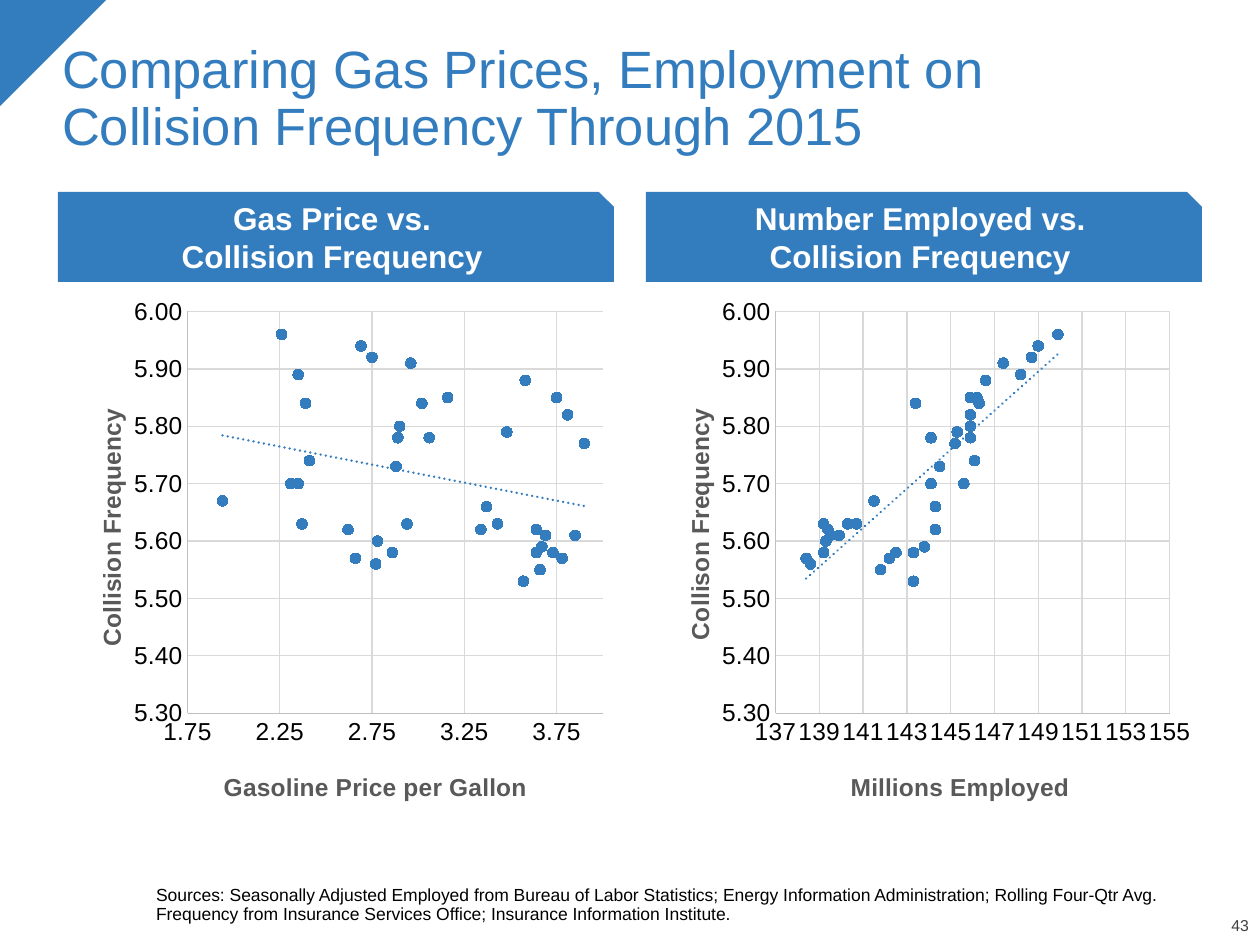
from pptx import Presentation
from pptx.chart.data import XyChartData
from pptx.dml.color import RGBColor
from pptx.enum.chart import XL_CHART_TYPE as ChartType, XL_MARKER_STYLE as Marker
from pptx.enum.chart import XL_TICK_MARK as Tick
from pptx.enum.shapes import MSO_SHAPE as Shape
from pptx.enum.text import MSO_ANCHOR as Anchor, MSO_AUTO_SIZE as AutoSize, PP_ALIGN as Align
from pptx.oxml import parse_xml
from pptx.oxml.ns import nsdecls, qn
from pptx.util import Emu, Pt

PX = 914400 / 126
BLUE, WHITE, BLACK = "337DBE", "FFFFFF", "000000"
DARK, GREY, AXIS_LINE, GRID_LINE = "404040", "595959", "BFBFBF", "D9D9D9"

COLLISION_FREQUENCY = [
    5.84, 5.78, 5.73, 5.70, 5.74, 5.78, 5.80, 5.84, 5.85, 5.82,
    5.77, 5.70, 5.67, 5.63, 5.62, 5.57, 5.56, 5.58, 5.60, 5.63,
    5.62, 5.61, 5.61, 5.63, 5.55, 5.57, 5.58, 5.53, 5.58, 5.59,
    5.62, 5.66, 5.79, 5.85, 5.88, 5.91, 5.89, 5.92, 5.94, 5.96]
GAS_PRICE = [
    2.39, 2.89, 2.88, 2.31, 2.41, 3.06, 2.90, 3.02, 3.16, 3.81,
    3.90, 2.35, 1.94, 2.37, 2.62, 2.66, 2.77, 2.86, 2.78, 2.94,
    3.34, 3.85, 3.69, 3.43, 3.66, 3.78, 3.73, 3.57, 3.64, 3.67,
    3.64, 3.37, 3.48, 3.75, 3.58, 2.96, 2.35, 2.75, 2.69, 2.26]
MILLIONS_EMPLOYED = [
    143.4, 144.1, 144.5, 145.6, 146.1, 145.9, 145.9, 146.3, 145.9, 145.9,
    145.2, 144.1, 141.5, 140.3, 139.4, 138.4, 138.6, 139.2, 139.3, 139.2,
    139.4, 139.5, 139.9, 140.7, 141.8, 142.2, 142.5, 143.3, 143.3, 143.8,
    144.3, 144.3, 145.3, 146.2, 146.6, 147.4, 148.2, 148.7, 149.0, 149.9]


def px(length):
    return Emu(round(length * PX))


def color(value):
    return RGBColor.from_string(value)


def set_layout(parent, index, x, y, size=None):
    """Place a chart part by fractions of the chart frame."""
    for old in parent.findall(qn("c:layout")):
        parent.remove(old)
    parts = [("xMode", "edge"), ("yMode", "edge"), ("x", x), ("y", y)]
    if size:
        parts = [("layoutTarget", "inner")] + parts + [("w", size[0]), ("h", size[1])]
    body = "".join(f'<c:{tag} val="{value}"/>' for tag, value in parts)
    parent.insert(index, parse_xml(
        f'<c:layout {nsdecls("c")}><c:manualLayout>{body}</c:manualLayout></c:layout>'))


class SlideBuilder:
    font_name = "Arial"

    def __init__(self, slide):
        self.slide = slide

    def style_font(self, font, size, hex_color, bold=False):
        font.name, font.size, font.bold = self.font_name, Pt(size), bold
        font.color.rgb = color(hex_color)

    def fill_text(self, box, text, size, hex_color, bold=False, align=Align.LEFT,
                  anchor=Anchor.BOTTOM, insets=(0, 0, 0, 0), spacing=None):
        frame = box.text_frame
        frame.word_wrap, frame.auto_size = True, AutoSize.NONE
        frame.vertical_anchor = anchor
        frame.margin_left, frame.margin_top, frame.margin_right, frame.margin_bottom = map(px, insets)
        para = frame.paragraphs[0]
        para.text = text
        para.alignment, para.line_spacing = align, spacing
        para.space_before = Pt(0)
        for run in para.runs:
            self.style_font(run.font, size, hex_color, bold)
        return para

    def placeholder(self, index, area, text, size, hex_color, insets=(0, 0, 0, 0)):
        box = self.slide.placeholders[index]
        box.left, box.top, box.width, box.height = map(px, area)
        para = self.fill_text(box, text, size, hex_color, insets=insets, spacing=0.9)
        if index:
            properties = para._p.get_or_add_pPr()
            properties.set("marL", "0")
            properties.set("indent", "0")
            properties.append(parse_xml(f'<a:buNone {nsdecls("a")}/>'))

    def text_box(self, area, text, size, hex_color, align):
        box = self.slide.shapes.add_textbox(*map(px, area))
        self.fill_text(box, text, size, hex_color, align=align, spacing=0.9)

    def shape(self, kind, area, rotation=0):
        shape = self.slide.shapes.add_shape(kind, *map(px, area))
        shape.shadow.inherit = False
        shape.fill.solid()
        shape.fill.fore_color.rgb = color(BLUE)
        shape.line.fill.background()
        shape.rotation = rotation
        return shape

    def header(self, area, text):
        self.fill_text(self.shape(Shape.SNIP_1_RECTANGLE, area), text, 18, WHITE, True,
                       Align.CENTER, Anchor.MIDDLE, (13, 6, 13, 13))

    def axis(self, axis, title, title_at, scale, number_format, vertical=False):
        axis.minimum_scale, axis.maximum_scale, axis.major_unit = scale
        axis.major_tick_mark = axis.minor_tick_mark = Tick.NONE
        axis.has_major_gridlines = True
        for line, shade in ((axis.format.line, AXIS_LINE),
                            (axis.major_gridlines.format.line, GRID_LINE)):
            line.color.rgb, line.width = color(shade), Pt(0.75)
        axis.tick_labels.number_format = number_format
        axis.tick_labels.number_format_is_linked = False
        self.style_font(axis.tick_labels.font, 14, BLACK)
        frame = axis.axis_title.text_frame
        frame.text = title
        self.style_font(frame.paragraphs[0].runs[0].font, 14, GREY, True)
        if vertical:
            frame._txBody.bodyPr.set("rot", "-5400000")
        set_layout(axis.axis_title._element, 1, *title_at)

    def scatter(self, area, x_values, x_axis, y_axis, plot_width):
        data = XyChartData()
        points = data.add_series("Series 1")
        for x, y in zip(x_values, COLLISION_FREQUENCY):
            points.add_data_point(x, y)
        chart = self.slide.shapes.add_chart(ChartType.XY_SCATTER, *map(px, area), data).chart
        chart.has_title = chart.has_legend = False
        self.style_font(chart.font, 14, BLACK)
        self.axis(chart.category_axis, *x_axis)
        self.axis(chart.value_axis, *y_axis, (5.3, 6, 0.1), "#,##0.00", vertical=True)
        plot = chart.plots[0]
        plot.vary_by_categories = False
        series = plot.series[0]
        series.format.line.fill.background()
        series.marker.style, series.marker.size = Marker.CIRCLE, 6
        series.marker.format.fill.solid()
        series.marker.format.fill.fore_color.rgb = color(BLUE)
        series.marker.format.line.color.rgb = color(BLUE)
        self.add_trend(series)
        set_layout(chart._chartSpace.chart.plotArea, 0, 0.233, 0.046, (plot_width, 0.754))

    def add_trend(self, series):
        trend = parse_xml(
            f'<c:trendline {nsdecls("c", "a")}><c:spPr><a:ln w="{Pt(1.5)}" cap="rnd"><a:solidFill>'
            f'<a:srgbClr val="{BLUE}"/></a:solidFill><a:prstDash val="sysDot"/></a:ln></c:spPr>'
            '<c:trendlineType val="linear"/><c:dispRSqr val="0"/><c:dispEq val="0"/></c:trendline>')
        series._element.find(qn("c:xVal")).addprevious(trend)


def main():
    deck = Presentation()
    deck.slide_width, deck.slide_height = px(1260), px(945)
    page = SlideBuilder(deck.slides.add_slide(deck.slide_layouts[1]))

    page.shape(Shape.RIGHT_TRIANGLE, (0, 0, 106, 106), rotation=90)
    page.text_box((1188, 918, 61, 17), "43", 9, DARK, Align.RIGHT)
    page.placeholder(0, (49, 32, 1215, 131),
                     "Comparing Gas Prices, Employment on\vCollision Frequency Through 2015",
                     30, BLUE, insets=(13, 6, 13, 6))
    page.placeholder(1, (156, 867, 1058, 57),
                     "Sources: Seasonally Adjusted Employed from Bureau of Labor Statistics; "
                     "Energy Information Administration; Rolling Four-Qtr Avg. Frequency from "
                     "Insurance Services Office; Insurance Information Institute.", 10, BLACK)

    panels = [
        ("Gas Price vs.\vCollision Frequency", GAS_PRICE,
         ("Gasoline Price per Gallon", (0.29, 0.9), (1.75, 4, 0.5), "#,##0.00"),
         ("Collision Frequency", (0.06, 0.22)), 0.747),
        ("Number Employed vs.\vCollision Frequency", MILLIONS_EMPLOYED,
         ("Millions Employed", (0.36, 0.9), (137, 155, 2), "General"),
         ("Collison Frequency", (0.06, 0.22)), 0.709),
    ]
    for column, (heading, x_values, x_axis, y_axis, plot_width) in enumerate(panels):
        left = 58 + 588 * column
        page.header((left, 192, 556, 90), heading)
        page.scatter((left, 287, 556, 533), x_values, x_axis, y_axis, plot_width)

    deck.save("out.pptx")


if __name__ == "__main__":
    main()
